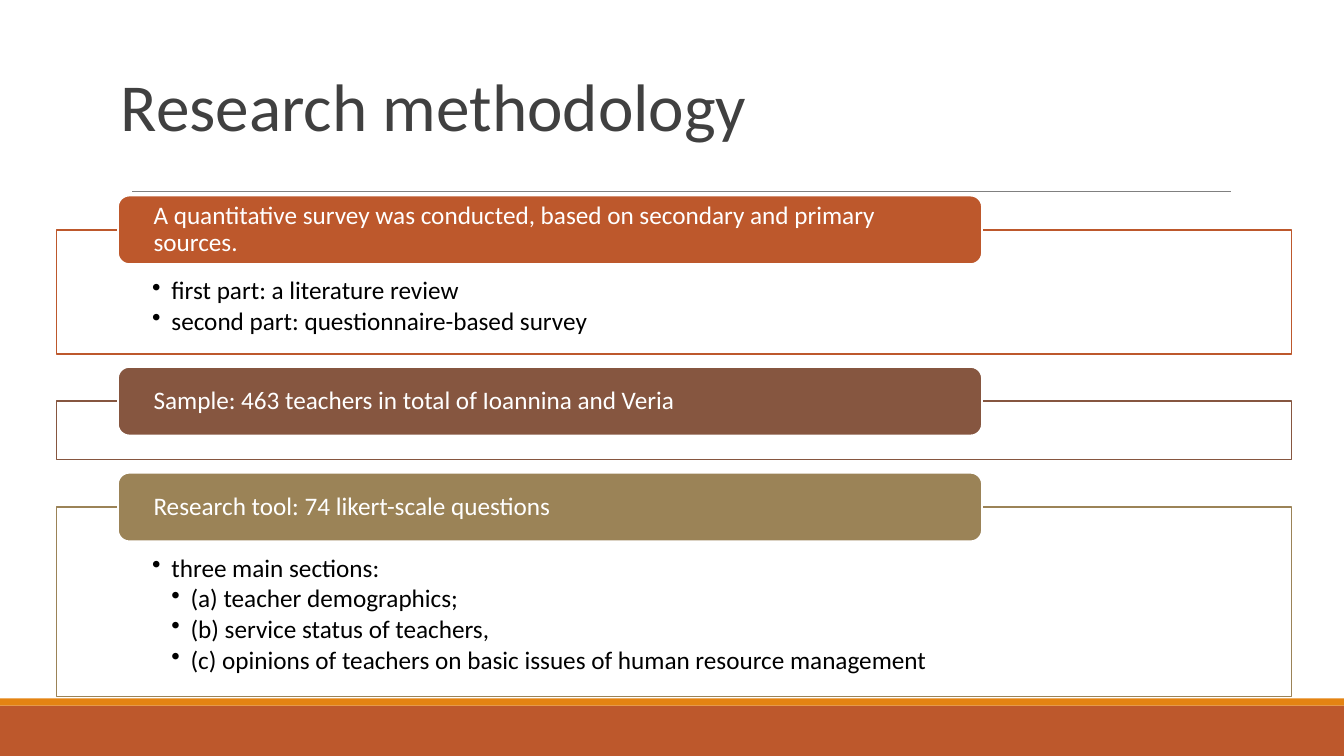
from lxml import etree
from pptx import Presentation
from pptx.dml.color import RGBColor
from pptx.enum import shapes, text
from pptx.oxml import ns
from pptx.util import Inches, Pt

# Content: heading, colour, frame height, points as (level, wording)
TITLE = "Research methodology"
SECTIONS = [
    ("A quantitative survey was conducted, based on secondary and primary sources.",
     "rust", 1.23,
     [(1, "first part: a literature review"),
      (1, "second part: questionnaire-based survey")]),
    ("Sample: 463 teachers in total of Ioannina and Veria", "brown", 0.58, []),
    ("Research tool: 74 likert-scale questions", "olive", 1.88,
     [(1, "three main sections:"),
      (2, "(a) teacher demographics;"),
      (2, "(b) service status of teachers,"),
      (2, "(c) opinions of teachers on basic issues of human resource management")]),
]
COLORS = {"rust": "BD582C", "orange": "E48312", "brown": "865640", "olive": "9B8357",
          "white": "FFFFFF", "black": "000000", "title": "404040", "rule": "808080"}
FONT = "Calibri"

# Layout, in inches
WIDTH, HEIGHT = 13.33, 7.5
FRAME_LEFT, FRAME_WIDTH = 0.56, 12.25
TAB_LEFT, TAB_WIDTH, TAB_HEIGHT = 1.17, 8.57, 0.68
FIRST_TOP, GAP, INDENT = 1.94, 0.13, 0.19


def color(name):
    return RGBColor.from_string(COLORS[name])


def add_box(kind, left, top, width, height, fill, line=None):
    box = slide.shapes.add_shape(kind, Inches(left), Inches(top),
                                 Inches(width), Inches(height))
    box.shadow.inherit = False
    box.fill.solid()
    box.fill.fore_color.rgb = color(fill)
    if line:
        box.line.color.rgb = color(line)
        box.line.width = Pt(1.25)
    else:
        box.line.fill.background()
    return box


def set_frame(frame, anchor, left, top=0, bottom=0):
    frame.word_wrap = True
    frame.vertical_anchor = anchor
    frame.margin_left = frame.margin_right = Inches(left)
    frame.margin_top, frame.margin_bottom = Inches(top), Inches(bottom)


def style(paragraph, size, name, spacing=0.9):
    paragraph.alignment = text.PP_ALIGN.LEFT
    paragraph.line_spacing = spacing
    for run in paragraph.runs:
        run.font.name = FONT
        run.font.size = Pt(size)
        run.font.color.rgb = color(name)


def add_bullet(paragraph, level):
    paragraph.level = level
    props = paragraph._p.get_or_add_pPr()
    props.set("marL", str(Inches(INDENT * level)))
    props.set("indent", str(-Inches(INDENT)))
    etree.SubElement(props, ns.qn("a:buChar")).set("char", "•")


prs = Presentation()
prs.slide_width, prs.slide_height = Inches(WIDTH), Inches(HEIGHT)
slide = prs.slides.add_slide(prs.slide_layouts[5])

# Footer bands and rule under the title
add_box(shapes.MSO_SHAPE.RECTANGLE, 0, 7, WIDTH, 0.5, "rust")
add_box(shapes.MSO_SHAPE.RECTANGLE, 0, 6.93, WIDTH, 0.07, "orange")
rule = slide.shapes.add_connector(shapes.MSO_CONNECTOR.STRAIGHT, Inches(1.31),
                                  Inches(1.9), Inches(12.21), Inches(1.9))
rule.line.color.rgb = color("rule")
rule.line.width = Pt(0.5)
etree.SubElement(rule._element.spPr, ns.qn("a:effectLst"))

# Title
title = slide.shapes.title
title.left, title.top = Inches(1.2), Inches(0.31)
title.width, title.height = Inches(11), Inches(1.58)
title.text_frame.text = TITLE
set_frame(title.text_frame, text.MSO_ANCHOR.MIDDLE, 0)
style(title.text_frame.paragraphs[0], 48, "title", 0.85)

# Sections: a frame with its points, and a heading tab across the frame's top edge
tab_top = FIRST_TOP
for heading, hue, frame_height, points in SECTIONS:
    frame_top = tab_top + TAB_HEIGHT / 2
    section = add_box(shapes.MSO_SHAPE.RECTANGLE, FRAME_LEFT, frame_top,
                      FRAME_WIDTH, frame_height, "white", hue)
    fill_color = section._element.spPr.find(".//" + ns.qn("a:srgbClr"))
    etree.SubElement(fill_color, ns.qn("a:alpha")).set("val", "90000")
    if points:
        body = section.text_frame
        set_frame(body, text.MSO_ANCHOR.TOP, 0.95, 0.48, 0.14)
        body.text = "\n".join(wording for _, wording in points)
        for paragraph, (level, _) in zip(body.paragraphs, points):
            style(paragraph, 18, "black")
            paragraph.space_after = Pt(2.5)
            add_bullet(paragraph, level)

    tab = add_box(shapes.MSO_SHAPE.ROUNDED_RECTANGLE, TAB_LEFT, tab_top,
                  TAB_WIDTH, TAB_HEIGHT, hue, "white")
    set_frame(tab.text_frame, text.MSO_ANCHOR.MIDDLE, 0.32)
    tab.text_frame.text = heading
    style(tab.text_frame.paragraphs[0], 18, "white")
    tab_top = frame_top + frame_height + GAP

prs.save("out.pptx")
